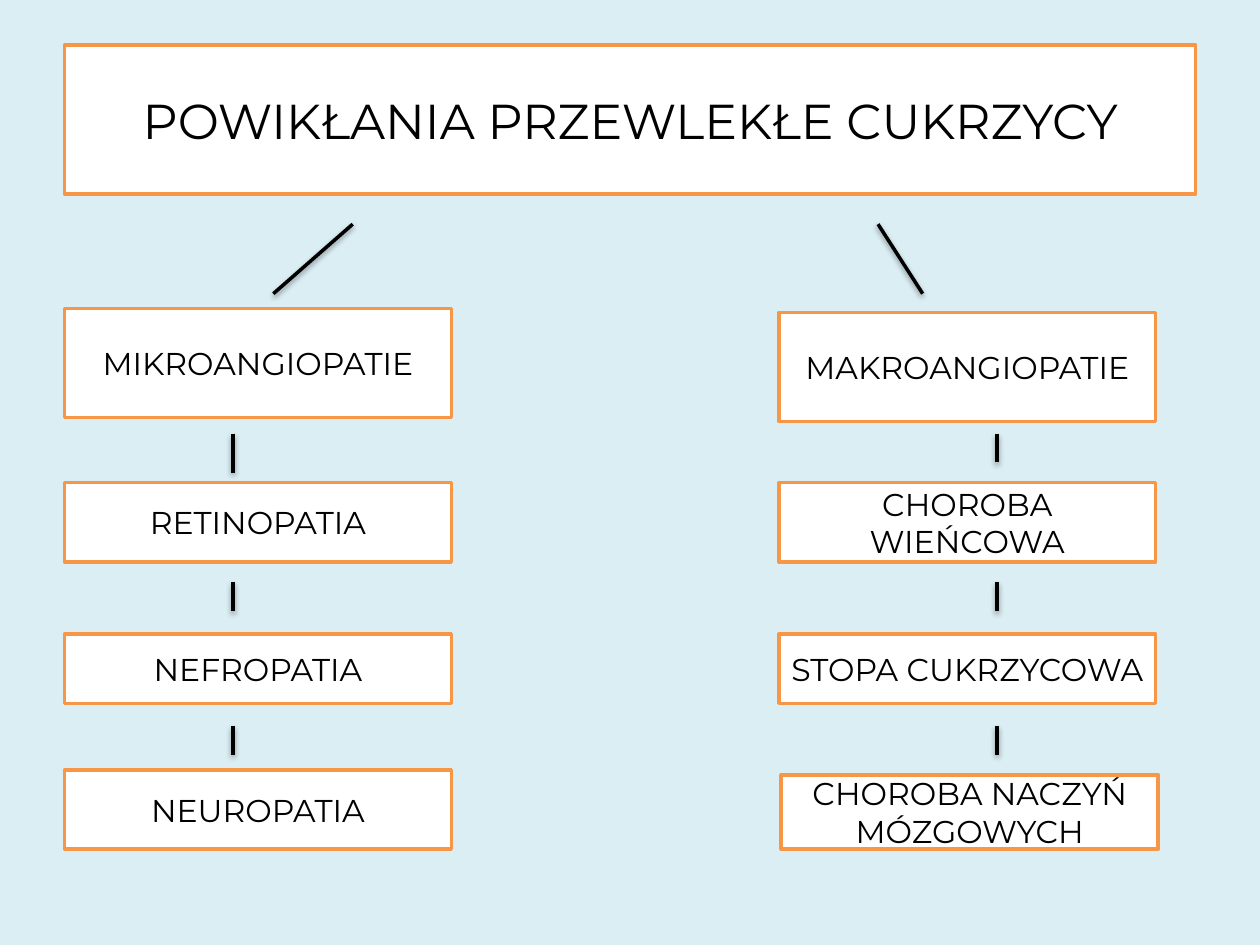
from dataclasses import dataclass

import lxml.etree
import pptx
import pptx.dml.color
import pptx.enum.shapes
import pptx.enum.text
import pptx.oxml
import pptx.oxml.ns
import pptx.slide
import pptx.util
from pptx.util import Cm

COLOURS = {
    "background": "DBEEF4",
    "box": "FFFFFF",
    "border": "F79646",
    "ink": "000000",
}
FONT = "Montserrat"
LINE_WIDTH = pptx.util.Pt(2)


@dataclass(frozen=True)
class Box:
    """A captioned rectangle; lengths in centimetres."""
    text: str
    left: float
    top: float
    width: float
    height: float
    size: int = 18


@dataclass(frozen=True)
class Link:
    """A straight line between two points; lengths in centimetres."""
    start_x: float
    start_y: float
    end_x: float
    end_y: float


@dataclass(frozen=True)
class Branch:
    """A column of boxes, with the x of the links between them."""
    left: float
    width: float
    link_x: float
    first_link_end: float
    heading: tuple[str, float]
    middle: tuple[str, str]
    last: Box


BRANCHES = [
    Branch(1.3, 7.8, 4.7, 9.53, ("MIKROANGIOPATIE", 6.22),
           ("RETINOPATIA", "NEFROPATIA"),
           Box("NEUROPATIA", 1.3, 15.52, 7.8, 1.6)),
    Branch(15.7, 7.6, 20.1, 9.32, ("MAKROANGIOPATIE", 6.3),
           ("CHOROBA WIEŃCOWA", "STOPA CUKRZYCOWA"),
           Box("CHOROBA NACZYŃ MÓZGOWYCH", 15.75, 15.62, 7.6, 1.5)),
]
TITLE = Box("POWIKŁANIA PRZEWLEKŁE CUKRZYCY", 1.3, 0.91, 22.8, 3, 28)
TITLE_LINKS = [Link(7.11, 4.52, 5.51, 5.92), Link(17.7, 4.52, 18.6, 5.92)]
HEADING_HEIGHT = 2.2
MIDDLE_ROWS = [(9.73, 1.6), (12.78, 1.4)]  # top, height
FIRST_LINK_TOP = 8.74
LOWER_LINKS = [(11.73, 12.32), (14.63, 15.21)]  # top, bottom


def colour(name: str) -> pptx.dml.color.RGBColor:
    return pptx.dml.color.RGBColor.from_string(COLOURS[name])


def draw_box(slide: pptx.slide.Slide, box: Box) -> None:
    shape = slide.shapes.add_shape(
        pptx.enum.shapes.MSO_SHAPE.RECTANGLE,
        Cm(box.left), Cm(box.top), Cm(box.width), Cm(box.height))
    shape.shadow.inherit = False
    shape.fill.solid()
    shape.fill.fore_color.rgb = colour("box")
    shape.line.color.rgb = colour("border")
    shape.line.width = LINE_WIDTH
    frame = shape.text_frame
    frame.word_wrap = True
    frame.vertical_anchor = pptx.enum.text.MSO_ANCHOR.MIDDLE
    paragraph = frame.paragraphs[0]
    paragraph.alignment = pptx.enum.text.PP_ALIGN.CENTER
    run = paragraph.add_run()
    run.text = box.text
    run.font.name = FONT
    run.font.size = pptx.util.Pt(box.size)
    run.font.color.rgb = colour("ink")


def draw_link(slide: pptx.slide.Slide, link: Link) -> None:
    """Draw a line with a soft shadow just below it."""
    connector = slide.shapes.add_connector(
        pptx.enum.shapes.MSO_CONNECTOR.STRAIGHT,
        Cm(link.start_x), Cm(link.start_y), Cm(link.end_x), Cm(link.end_y))
    connector.line.color.rgb = colour("ink")
    connector.line.width = LINE_WIDTH
    qualified = pptx.oxml.ns.qn
    properties = connector.element.find(qualified("p:spPr"))
    effects = lxml.etree.SubElement(properties, qualified("a:effectLst"))
    shadow = lxml.etree.SubElement(
        effects, qualified("a:outerShdw"), blurRad="40000", dist="20000",
        dir="5400000", rotWithShape="0")
    shade = lxml.etree.SubElement(
        shadow, qualified("a:srgbClr"), val=COLOURS["ink"])
    lxml.etree.SubElement(shade, qualified("a:alpha"), val="38000")


def draw_branch(slide: pptx.slide.Slide, branch: Branch) -> None:
    text, top = branch.heading
    draw_box(slide, Box(text, branch.left, top, branch.width, HEADING_HEIGHT))
    for text, (top, height) in zip(branch.middle, MIDDLE_ROWS):
        draw_box(slide, Box(text, branch.left, top, branch.width, height))
    draw_box(slide, branch.last)
    for top, bottom in [(FIRST_LINK_TOP, branch.first_link_end), *LOWER_LINKS]:
        draw_link(slide, Link(branch.link_x, top, branch.link_x, bottom))


def main() -> None:
    presentation = pptx.Presentation()
    presentation.slide_width = Cm(25.4)
    presentation.slide_height = Cm(19.05)
    slide = presentation.slides.add_slide(presentation.slide_layouts[6])
    slide.background.fill.solid()
    slide.background.fill.fore_color.rgb = colour("background")

    draw_box(slide, TITLE)
    for link in TITLE_LINKS:
        draw_link(slide, link)
    for branch in BRANCHES:
        draw_branch(slide, branch)
    presentation.save("out.pptx")


if __name__ == "__main__":
    main()
